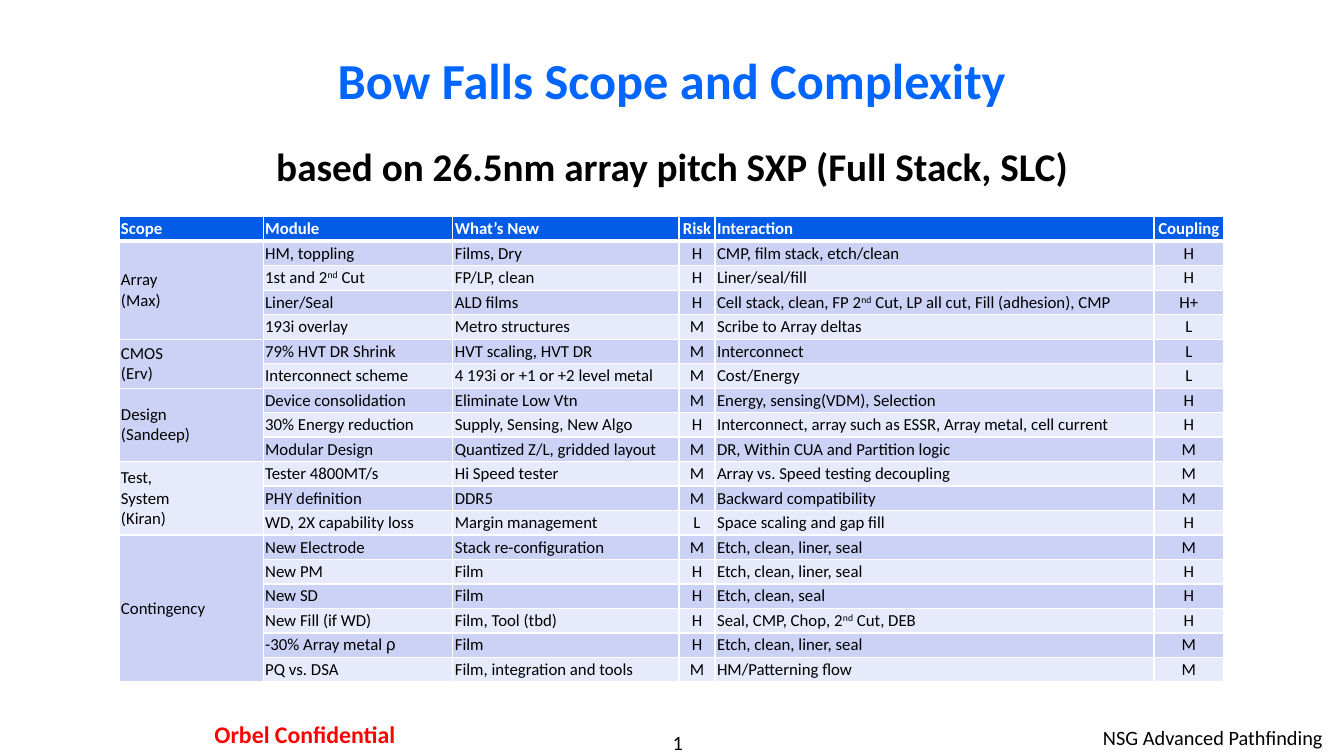
import pptx
import pptx.dml.color
import pptx.enum.text
import pptx.oxml
import pptx.oxml.ns
import pptx.util

Pt = pptx.util.Pt
RGBColor = pptx.dml.color.RGBColor
ALIGN = pptx.enum.text.PP_ALIGN
MIDDLE = pptx.enum.text.MSO_ANCHOR.MIDDLE
TOP = pptx.enum.text.MSO_ANCHOR.TOP

BLUE = RGBColor(0x00, 0x66, 0xFF)
HEADER = RGBColor(0x00, 0x5C, 0xE7)
DARK = RGBColor(0xCC, 0xD2, 0xF6)
LIGHT = RGBColor(0xE7, 0xEA, 0xFA)
BLACK = RGBColor(0x00, 0x00, 0x00)
WHITE = RGBColor(0xFF, 0xFF, 0xFF)
RED = RGBColor(0xFF, 0x00, 0x00)


def write(frame, text, size, color, bold, align):
    """Fill a text frame; newlines part paragraphs and ^ parts runs."""
    for index, line in enumerate(text.split("\n")):
        par = frame.add_paragraph() if index else frame.paragraphs[0]
        par.alignment = align
        for part in line.split("^"):
            run = par.add_run()
            run.text = part
            look = {"size": Pt(size), "bold": bold,
                    "name": "Arial" if part == "ρ" else "Calibri"}
            for key, value in look.items():
                setattr(run.font, key, value)
            run.font.color.rgb = color
            if part == "nd":
                run.font._element.set("baseline", "30000")


def border(cell, side, width):
    """Draw a solid white line on one side (L, R, T or B) of a cell."""
    cell._tc.get_or_add_tcPr().append(pptx.oxml.parse_xml(
        f'<a:ln{side} {pptx.oxml.ns.nsdecls("a")} w="{Pt(width)}"><a:solidFill>'
        f'<a:srgbClr val="{WHITE}"/></a:solidFill></a:ln{side}>'))


deck = pptx.Presentation()
deck.slide_width, deck.slide_height = Pt(960), Pt(540)
slide = deck.slides.add_slide(deck.slide_layouts[5])

# Title
title = slide.shapes.title
place = {"left": Pt(72), "top": Pt(16.5), "width": Pt(816), "height": Pt(80)}
for key, value in place.items():
    setattr(title, key, value)
title.text_frame.vertical_anchor = MIDDLE
write(title.text_frame, "Bow Falls Scope and Complexity", 36, BLUE, True, ALIGN.CENTER)

# Subtitle and footers: text, box, margins across and down, size, colour, bold, align
labels = [
    ("based on 26.5nm array pitch SXP (Full Stack, SLC)",
     (144, 98, 672, 42), (7.2, 3.6), 28, BLACK, True, ALIGN.CENTER),
    ("1", (400.3, 521.3, 167.8, 17.7), (0, 0), 14.5, BLACK, False, ALIGN.CENTER),
    ("NSG Advanced Pathfinding",
     (635.8, 514.8, 316, 25), (7.2, 3.6), 14.5, BLACK, False, ALIGN.RIGHT),
    ("Orbel Confidential",
     (111.6, 509.8, 212.4, 29.5), (8.6, 4.3), 17, RED, True, ALIGN.CENTER),
]
for text, box, (across, down), size, color, bold, align in labels:
    frame = slide.shapes.add_textbox(*map(Pt, box)).text_frame
    layout = {"word_wrap": True, "vertical_anchor": TOP,
              "margin_left": Pt(across), "margin_right": Pt(across),
              "margin_top": Pt(down), "margin_bottom": Pt(down)}
    for key, value in layout.items():
        setattr(frame, key, value)
    write(frame, text, size, color, bold, align)

# Scope table
heads = ["Scope", "Module", "What’s New", "Risk", "Interaction", "Coupling"]
scopes = {
    "Array\n(Max)": [
        ("HM, toppling", "Films, Dry", "H", "CMP, film stack, etch/clean", "H"),
        ("1st and 2^nd^ Cut", "FP/LP, clean", "H", "Liner/seal/fill", "H"),
        ("Liner/Seal", "ALD films", "H",
         "Cell stack, clean, FP 2^nd^ Cut, LP all cut, Fill (adhesion), CMP", "H+"),
        ("193i overlay", "Metro structures", "M", "Scribe to Array deltas", "L"),
    ],
    "CMOS\n(Erv)": [
        ("79% HVT DR Shrink", "HVT scaling, HVT DR", "M", "Interconnect", "L"),
        ("Interconnect scheme", "4 193i or +1 or +2 level metal", "M", "Cost/Energy", "L"),
    ],
    "Design\n(Sandeep)": [
        ("Device consolidation", "Eliminate Low Vtn", "M",
         "Energy, sensing(VDM), Selection", "H"),
        ("30% Energy reduction", "Supply, Sensing, New Algo", "H",
         "Interconnect, array such as ESSR, Array metal, cell current", "H"),
        ("Modular Design", "Quantized Z/L, gridded layout", "M",
         "DR, Within CUA and Partition logic", "M"),
    ],
    "Test,\nSystem\n(Kiran)": [
        ("Tester 4800MT/s", "Hi Speed tester", "M",
         "Array vs. Speed testing decoupling", "M"),
        ("PHY definition", "DDR5", "M", "Backward compatibility", "M"),
        ("WD, 2X capability loss", "Margin management", "L",
         "Space scaling and gap fill", "H"),
    ],
    "Contingency": [
        ("New Electrode", "Stack re-configuration", "M", "Etch, clean, liner, seal", "M"),
        ("New PM", "Film", "H", "Etch, clean, liner, seal", "H"),
        ("New SD", "Film", "H", "Etch, clean, seal", "H"),
        ("New Fill (if WD)", "Film, Tool (tbd)", "H", "Seal, CMP, Chop, 2^nd^ Cut, DEB", "H"),
        ("-30% Array metal ^ρ", "Film", "H", "Etch, clean, liner, seal", "M"),
        ("PQ vs. DSA", "Film, integration and tools", "M", "HM/Patterning flow", "M"),
    ],
}
rows = [heads]
spans = []
for scope, items in scopes.items():
    spans.append((len(rows), len(rows) + len(items) - 1))
    for index, item in enumerate(items):
        rows.append(["" if index else scope, *item])

widths = [103, 135.5, 161.5, 25.8, 313.5, 49.9]
pitch = 17.5
table = slide.shapes.add_table(len(rows), len(heads), Pt(85), Pt(154.8),
                               Pt(sum(widths)), Pt(pitch * len(rows))).table
for column, width in zip(table.columns, widths):
    column.width = Pt(width)
for row in table.rows:
    row.height = Pt(pitch)

for r, row in enumerate(rows):
    for c, text in enumerate(row):
        cell = table.cell(r, c)
        for side in "LRTB":
            thick = (r, side) in [(0, "B"), (1, "T")]
            border(cell, side, 3 if thick else 1)
        cell.fill.solid()
        cell.fill.fore_color.rgb = HEADER if r == 0 else DARK if r % 2 else LIGHT
        cell.vertical_anchor = MIDDLE
        for edge in ("left", "right", "top", "bottom"):
            setattr(cell, f"margin_{edge}", Pt(1.44))
        if text:
            align = ALIGN.CENTER if heads[c] in ("Risk", "Coupling") else ALIGN.LEFT
            write(cell.text_frame, text, 12, BLACK if r else WHITE, r == 0, align)
for first, last in spans:
    table.cell(first, 0).merge(table.cell(last, 0))

deck.save("out.pptx")
